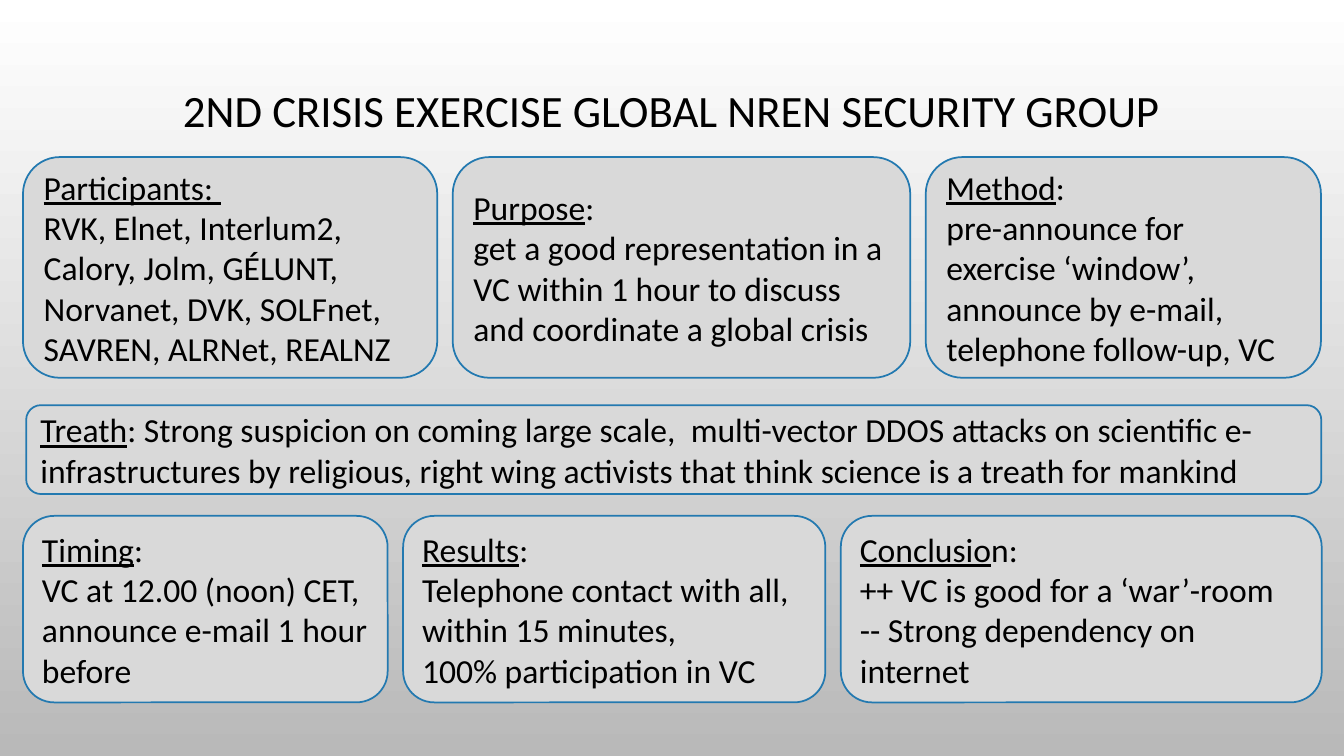
from dataclasses import dataclass

from pptx import Presentation
from pptx.dml.color import RGBColor
from pptx.enum.shapes import MSO_SHAPE
from pptx.enum.text import MSO_ANCHOR, MSO_AUTO_SIZE, PP_ALIGN
from pptx.util import Cm, Pt

COLOURS = {
    "text": "000000",
    "card": "D9D9D9",
    "outline": "2379B0",
    "sky": "FFFFFF",
    "ground": "B9B9B9",
}
FONT = "Calibri"
MARGIN = 0.58
GAP = 0.39


@dataclass
class Card:
    width: float
    underlined: str
    rest: str
    lines: tuple[str, ...] = ()


@dataclass
class Row:
    left: float
    top: float
    height: float
    cards: tuple[Card, ...]


ROWS = (
    Row(MARGIN, 3.96, 5.56, (
        Card(10.44, "Participants: ", "", (
            "RVK, Elnet, Interlum2, Calory, Jolm, GÉLUNT, "
            "Norvanet, DVK, SOLFnet, SAVREN, ALRNet, REALNZ",)),
        Card(11.53, "Purpose", ":", (
            "get a good representation in a VC within 1 hour "
            "to discuss and coordinate a global crisis",)),
        Card(9.96, "Method", ":", (
            "pre-announce for exercise ‘window’, announce by e-mail, "
            "telephone follow-up, VC",)),
    )),
    Row(MARGIN, 13, 4.7, (
        Card(9.19, "Timing", ":", (
            "VC at 12.00 (noon) CET, announce e-mail 1 hour before",)),
        Card(10.64, "Results", ":", (
            "Telephone contact with all,",
            "within 15 minutes,",
            "100% participation in VC")),
        Card(12.12, "Conclusio", "n:", (
            "++ VC is good for a ‘war’-room",
            "-- Strong dependency on internet")),
    )),
    Row(0.66, 10.21, 2.24, (
        Card(32.64, "Treath",
             ": Strong suspicion on coming large scale,  multi-vector DDOS "
             "attacks on scientific e-infrastructures by religious, right wing "
             "activists that think science is a treath for mankind"),
    )),
)


def colour(name: str) -> RGBColor:
    return RGBColor.from_string(COLOURS[name])


def format_paragraph(para, size: int, alignment: PP_ALIGN) -> None:
    para.alignment = alignment
    para.font.name = FONT
    para.font.size = Pt(size)
    para.font.color.rgb = colour("text")


def paint_background(page) -> None:
    fill = page.background.fill
    fill.gradient()
    fill.gradient_angle = 270
    for stop, name, position in zip(fill.gradient_stops, ("sky", "ground"), (0, 1)):
        stop.color.rgb = colour(name)
        stop.position = position


def set_title(page, text: str) -> None:
    title = page.shapes.title
    title.left, title.top, title.width, title.height = Cm(2.54), Cm(1.73), Cm(28.78), Cm(2.24)
    frame = title.text_frame
    frame.text = text
    frame.word_wrap = True
    frame.auto_size = MSO_AUTO_SIZE.NONE
    frame.vertical_anchor = MSO_ANCHOR.MIDDLE
    para = frame.paragraphs[0]
    format_paragraph(para, 32, PP_ALIGN.CENTER)
    para.line_spacing = 0.9


def draw_card(page, card: Card, left: float, row: Row) -> None:
    box = page.shapes.add_shape(
        MSO_SHAPE.ROUNDED_RECTANGLE, Cm(left), Cm(row.top), Cm(card.width), Cm(row.height))
    box.shadow.inherit = False
    box.fill.solid()
    box.fill.fore_color.rgb = colour("card")
    box.line.color.rgb = colour("outline")
    box.line.width = Pt(1.25)

    frame = box.text_frame
    frame.word_wrap = True
    frame.vertical_anchor = MSO_ANCHOR.MIDDLE
    heading = frame.paragraphs[0]
    span = heading.add_run()
    span.text = card.underlined
    span.font.underline = True
    if card.rest:
        heading.add_run().text = card.rest
    for line in card.lines:
        frame.add_paragraph().text = line
    for para in frame.paragraphs:
        format_paragraph(para, 24, PP_ALIGN.LEFT)


def draw_row(page, row: Row) -> None:
    left = row.left
    for card in row.cards:
        draw_card(page, card, left, row)
        left += card.width + GAP


def main() -> None:
    deck = Presentation()
    deck.slide_width, deck.slide_height = Cm(33.87), Cm(19.05)
    page = deck.slides.add_slide(deck.slide_layouts.get_by_name("Title Only"))
    paint_background(page)
    set_title(page, "2ND CRISIS EXERCISE GLOBAL NREN SECURITY GROUP")
    for row in ROWS:
        draw_row(page, row)
    deck.save("out.pptx")


if __name__ == "__main__":
    main()
